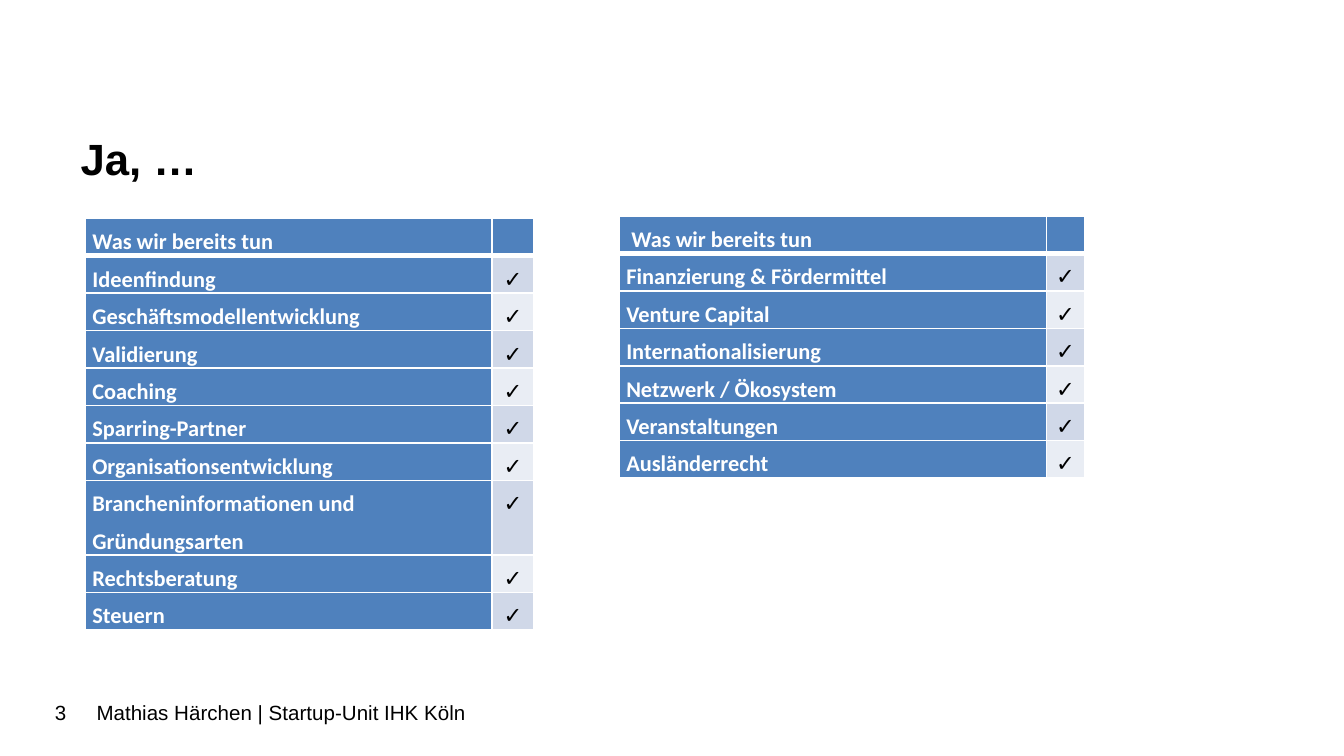
from lxml import etree
from pptx import Presentation, util as u
from pptx.dml.color import RGBColor
from pptx.enum import text
from pptx.oxml.ns import qn

THEME = dict(
    white="FFFFFF", black="000000", blue="4F81BD", bands=("D0D8E8", "E9EDF4"),
    head_font="Arial", table_font="Calibri",
    title=23.4, table=12, footer=11, line=20,
)

prs = Presentation()
prs.slide_width = u.Inches(10)
prs.slide_height = prs.slide_width * 9 // 16
W, H = prs.slide_width / 100, prs.slide_height / 100  # one percent of the slide
s = prs.slides.add_slide(prs.slide_layouts[5])


def style(p, font, size, color, bold=False):
    p.font.name, p.font.size, p.font.bold = font, u.Pt(size), bold
    p.font.color.rgb = RGBColor.from_string(color)


def border(cell, bottom):
    """White cell borders; the bottom width in points may differ."""
    tc_pr = cell._tc.get_or_add_tcPr()
    for i, (side, width) in enumerate(zip("LRTB", (1, 1, 1, bottom))):
        ln = etree.Element(qn(f"a:ln{side}"), w=str(u.Pt(width)))
        fill = etree.SubElement(ln, qn("a:solidFill"))
        etree.SubElement(fill, qn("a:srgbClr"), val=THEME["white"])
        tc_pr.insert(i, ln)


# Title
title = s.shapes.title
title.left, title.top = int(5 * W), int(16.7 * H)
title.width, title.height = int(90 * W), int(8.4 * H)
tf = title.text_frame
tf.text = "Ja, …"
tf.vertical_anchor = text.MSO_ANCHOR.MIDDLE
tf.paragraphs[0].alignment = text.PP_ALIGN.LEFT
style(tf.paragraphs[0], THEME["head_font"], THEME["title"], THEME["black"], True)

# Checklists: left, top and column widths in percent, then the rows
checklists = [
    (6.37, 28.9, (30.23, 3.14), [
        "Was wir bereits tun", "Ideenfindung", "Geschäftsmodellentwicklung",
        "Validierung", "Coaching", "Sparring-Partner",
        "Organisationsentwicklung", "Brancheninformationen und Gründungsarten",
        "Rechtsberatung", "Steuern"]),
    (46.1, 28.6, (31.77, 2.83), [
        "\u00a0Was wir bereits tun", "Finanzierung & Fördermittel",
        "Venture Capital", "Internationalisierung", "Netzwerk / Ökosystem",
        "Veranstaltungen", "Ausländerrecht"]),
]
for left, top, widths, topics in checklists:
    table = s.shapes.add_table(
        len(topics), 2, int(left * W), int(top * H),
        int(sum(widths) * W), u.Pt(THEME["line"]) * len(topics)).table
    table.first_col = True
    for column, width in zip(table.columns, widths):
        column.width = int(width * W)
    for row, topic in enumerate(topics):
        for col, label in enumerate((topic, "✓" if row else "")):
            cell = table.cell(row, col)
            tick = row > 0 and col == 1
            cell.margin_left = cell.margin_right = u.Inches(0.05)
            cell.margin_top = cell.margin_bottom = 0
            cell.text = label
            p = cell.text_frame.paragraphs[0]
            p.line_spacing = u.Pt(THEME["line"])
            p.alignment = text.PP_ALIGN.CENTER if tick else text.PP_ALIGN.LEFT
            style(p, THEME["table_font"], THEME["table"],
                  THEME["black" if tick else "white"], not tick)
            cell.fill.solid()
            cell.fill.fore_color.rgb = RGBColor.from_string(
                THEME["bands"][(row - 1) % 2] if tick else THEME["blue"])
            border(cell, 1 if row else 3)

# Footer: page number and author
for left, width, label in [
    (3.1, 3.9, "3"),
    (6.2, 74.8, "Mathias Härchen | Startup-Unit IHK Köln"),
]:
    sp = s.shapes.add_textbox(int(left * W), int(92.7 * H), int(width * W), int(3 * H))
    tf = sp.text_frame
    tf.word_wrap = True
    tf.margin_top = tf.margin_bottom = 0
    tf.vertical_anchor = text.MSO_ANCHOR.MIDDLE
    tf.text = label
    style(tf.paragraphs[0], THEME["head_font"], THEME["footer"], THEME["black"])

prs.save("out.pptx")
